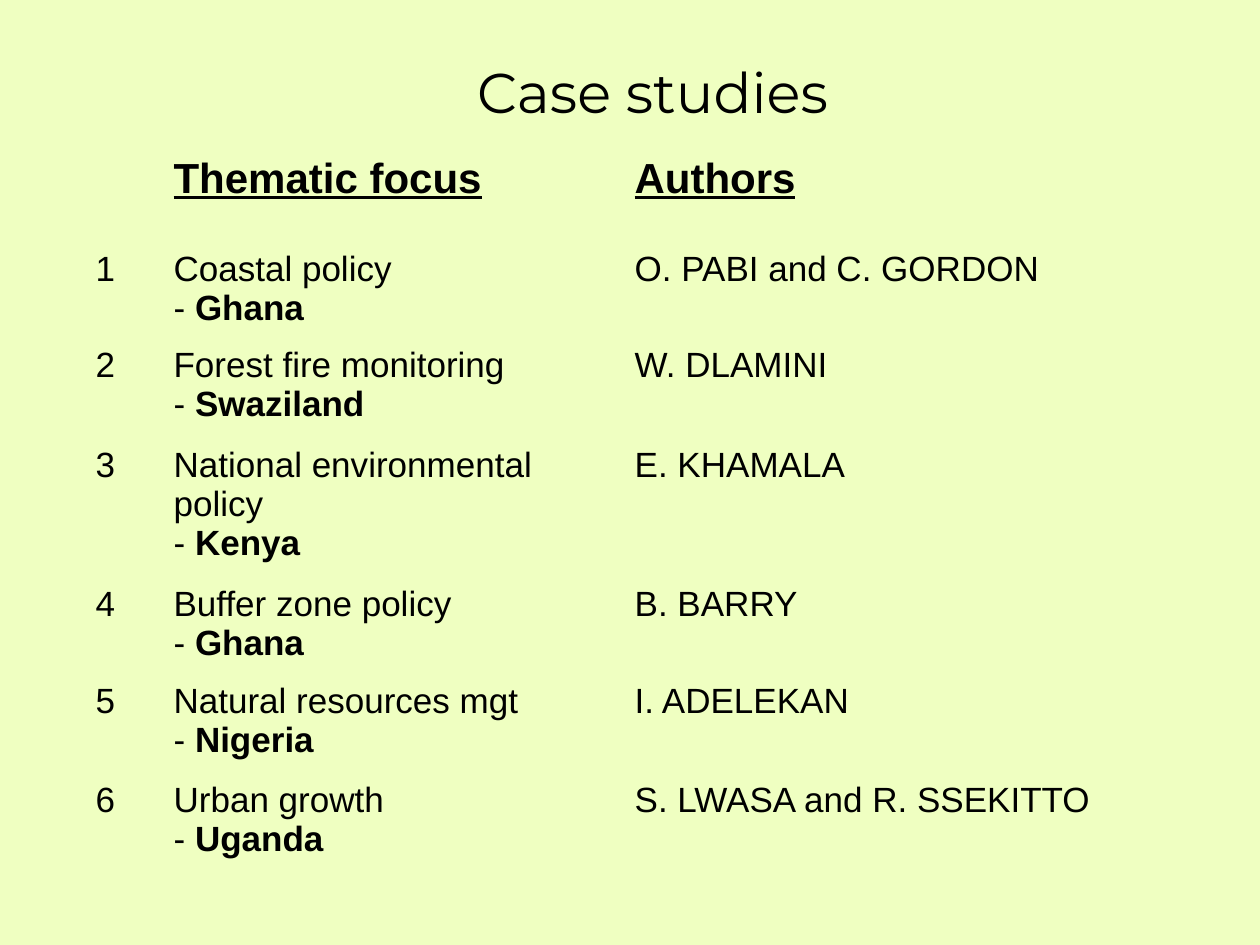
from pptx import Presentation
from pptx.dml.color import RGBColor
from pptx.enum.text import MSO_ANCHOR, PP_ALIGN
from pptx.oxml.ns import qn
from pptx.util import Pt

NO_STYLE_NO_GRID = "{2D5ABB26-0587-4C30-8999-92F81FD0307C}"
LEFT, WIDTH = Pt(47.5), Pt(651)
COLUMN_WIDTHS = [44.5, 263.5, 343]
ROW_HEIGHTS = [54, 54, 57, 57, 54, 57, 54]
CASE_STUDIES = [
    ("Coastal policy", "Ghana", "O. PABI and C. GORDON"),
    ("Forest fire monitoring", "Swaziland", "W. DLAMINI"),
    ("National environmental policy", "Kenya", "E. KHAMALA"),
    ("Buffer zone policy", "Ghana", "B. BARRY"),
    ("Natural resources mgt", "Nigeria", "I. ADELEKAN"),
    ("Urban growth", "Uganda", "S. LWASA and R. SSEKITTO"),
]


def color(hex_string):
    return RGBColor.from_string(hex_string)


def format_run(run, size, name="Arial", bold=False, underline=False):
    font = run.font
    font.name, font.size = name, Pt(size)
    font.bold, font.underline = bold, underline
    font.color.rgb = color("000000")


presentation = Presentation()
presentation.slide_width, presentation.slide_height = Pt(720), Pt(540)
slide = presentation.slides.add_slide(presentation.slide_layouts[6])
slide.background.fill.solid()
slide.background.fill.fore_color.rgb = color("EFFFC1")

# Title
title = slide.shapes.add_textbox(LEFT, Pt(19.5), WIDTH, Pt(65.5))
title.text_frame.word_wrap = True
title.text_frame.vertical_anchor = MSO_ANCHOR.MIDDLE
title.text_frame.text = "Case studies"
paragraph = title.text_frame.paragraphs[0]
paragraph.alignment = PP_ALIGN.CENTER
format_run(paragraph.runs[0], 32, name="Montserrat")

# Table without fills or borders
table = slide.shapes.add_table(
    len(ROW_HEIGHTS), len(COLUMN_WIDTHS), LEFT, Pt(85), WIDTH, Pt(sum(ROW_HEIGHTS))
).table
table.first_row = table.horz_banding = False
table._tbl.tblPr.find(qn("a:tableStyleId")).text = NO_STYLE_NO_GRID
for column, width in zip(table.columns, COLUMN_WIDTHS):
    column.width = Pt(width)
for row, height in zip(table.rows, ROW_HEIGHTS):
    row.height = Pt(height)
for cell in table.iter_cells():
    cell.fill.background()

for column_index, heading in enumerate(["Thematic focus", "Authors"], start=1):
    text_frame = table.cell(0, column_index).text_frame
    text_frame.text = heading
    format_run(text_frame.paragraphs[0].runs[0], 24, bold=True, underline=True)

for number, (focus, country, authors) in enumerate(CASE_STUDIES, start=1):
    for column_index, text in enumerate([str(number), focus, authors]):
        text_frame = table.cell(number, column_index).text_frame
        text_frame.text = text
        format_run(text_frame.paragraphs[0].runs[0], 20)
    paragraph = table.cell(number, 1).text_frame.add_paragraph()
    paragraph.text = "- "
    paragraph.add_run().text = country
    for run, bold in zip(paragraph.runs, [False, True]):
        format_run(run, 20, bold=bold)

presentation.save("out.pptx")
